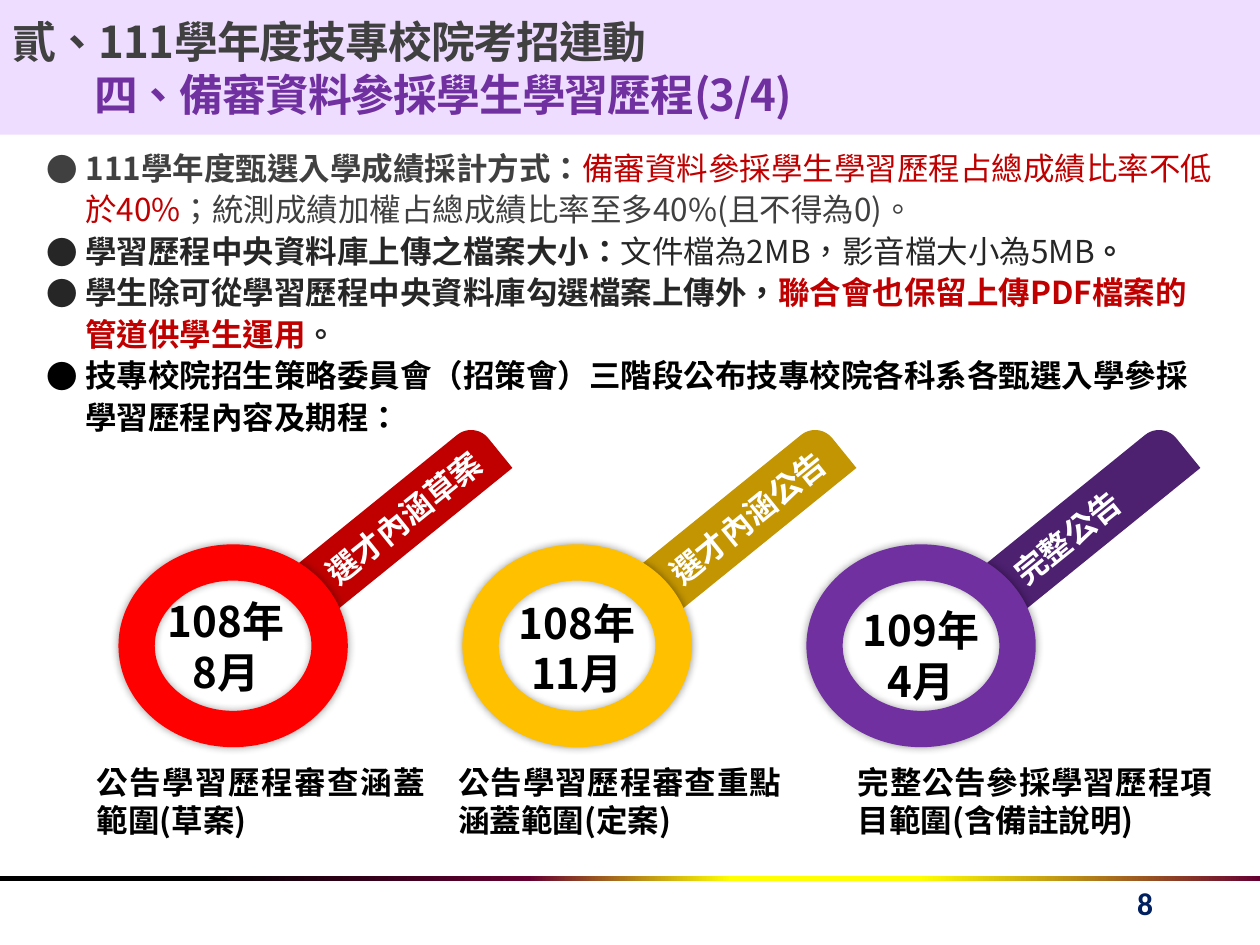
from lxml import etree
from pptx import Presentation
from pptx.dml.color import RGBColor
from pptx.enum.shapes import MSO_SHAPE
from pptx.enum.text import MSO_ANCHOR, PP_ALIGN
from pptx.oxml.ns import qn
from pptx.util import Inches, Pt

RECTANGLE, DONUT = MSO_SHAPE.RECTANGLE, MSO_SHAPE.DONUT
HANDLE = MSO_SHAPE.ROUND_2_SAME_RECTANGLE
MIDDLE = MSO_ANCHOR.MIDDLE
LEFT, CENTER, RIGHT, JUSTIFY = (PP_ALIGN.LEFT, PP_ALIGN.CENTER,
                                PP_ALIGN.RIGHT, PP_ALIGN.JUSTIFY)

BLACK = RGBColor(0x00, 0x00, 0x00)
WHITE = RGBColor(0xFF, 0xFF, 0xFF)
GRAY = RGBColor(0x40, 0x40, 0x40)
DARK_GRAY = RGBColor(0x26, 0x26, 0x26)
NAVY = RGBColor(0x00, 0x20, 0x60)
LILAC = RGBColor(0xEE, 0xDD, 0xFF)
PURPLE = RGBColor(0x70, 0x30, 0xA0)
DEEP_PURPLE = RGBColor(0x4D, 0x20, 0x70)
CRIMSON = RGBColor(0xC0, 0x00, 0x00)
RED = RGBColor(0xFF, 0x00, 0x00)
GOLD = RGBColor(0xFF, 0xC0, 0x00)
DARK_GOLD = RGBColor(0xC3, 0x95, 0x02)
YELLOW = RGBColor(0xFF, 0xFF, 0x00)
WINE = RGBColor(0x66, 0x00, 0x32)

FONT = "Noto Sans CJK SC"
RULE_STOPS = [(0, BLACK), (16, BLACK), (42, WINE), (58, YELLOW), (73, YELLOW), (100, WINE)]

# Each bullet is a list of (text, colour, bold)
BULLETS = [
    [("111學年度甄選入學成績採計方式：", GRAY, True),
     ("備審資料參採學生學習歷程占總成績比率不低於40%", CRIMSON, False),
     ("；統測成績加權占總成績比率至多40%(且不得為0)。", GRAY, False)],
    [("學習歷程中央資料庫上傳之檔案大小：", DARK_GRAY, True),
     ("文件檔為2MB，影音檔大小為5MB", DARK_GRAY, False),
     ("。", DARK_GRAY, True)],
    [("學生除可從學習歷程中央資料庫勾選檔案上傳外，", DARK_GRAY, True),
     ("聯合會也保留上傳PDF檔案的管道供學生運用", CRIMSON, True),
     ("。", DARK_GRAY, True)],
    [("技專校院招生策略委員會（招策會）三階段公布技專校院各科系各甄選入學"
      "參採學習歷程內容及期程：", BLACK, True)],
]

# Label, ring colour, handle colour, date lines, date box, caption, caption left and width
STAGES = [
    ("選才內涵草案", RED, CRIMSON, ("108年", "8月"), (1.13, 4.68, 1.33, 0.91),
     "公告學習歷程審查涵蓋範圍(草案)", 0.67, 2.8),
    ("選才內涵公告", GOLD, DARK_GOLD, ("108年", "11月"), (3.98, 4.69, 1.2, 0.91),
     "公告學習歷程審查重點涵蓋範圍(定案)", 3.54, 2.76),
    ("完整公告", PURPLE, DEEP_PURPLE, ("109年", "4月"), (6.68, 4.75, 1.26, 0.91),
     "完整公告參採學習歷程項目範圍(含備註說明)", 6.71, 3.01),
]
STAGE_LEFT, STAGE_STEP = 0.94, 2.73
HANDLE_ANGLE = 321


def add_run(paragraph, text, size, color, bold=True, name=FONT, spacing=None):
    run = paragraph.add_run()
    run.text = text
    formats = {"size": Pt(size), "bold": bold, "name": name}
    for attribute, value in formats.items():
        setattr(run.font, attribute, value)
    run.font.color.rgb = color
    properties = run._r.get_or_add_rPr()
    properties.set("lang", "zh-TW")
    if spacing is not None:
        properties.set("spc", str(spacing))
    east_asian = etree.Element(qn("a:ea"), typeface=name)
    properties.find(qn("a:latin")).addnext(east_asian)


def add_shape(slide, kind, box, color, adjustments=(), rotation=0):
    shape = slide.shapes.add_shape(kind, *map(Inches, box))
    shape.shadow.inherit = False
    shape.fill.solid()
    shape.fill.fore_color.rgb = color
    shape.line.fill.background()
    for index, value in enumerate(adjustments):
        shape.adjustments[index] = value
    shape.rotation = rotation
    return shape


def add_text(slide, box, lines, size, color, align=LEFT, name=FONT,
             line_spacing=None, rotation=0):
    text_box = slide.shapes.add_textbox(*map(Inches, box))
    text_box.rotation = rotation
    frame = text_box.text_frame
    frame.word_wrap = True
    for index, line in enumerate(lines):
        paragraph = frame.paragraphs[0] if index == 0 else frame.add_paragraph()
        paragraph.alignment = align
        paragraph.line_spacing = line_spacing
        add_run(paragraph, line, size, color, name=name)


def add_glow_shadow(shape):
    effects = shape._element.spPr.find(qn("a:effectLst"))
    shadow = etree.SubElement(effects, qn("a:outerShdw"), blurRad=str(Pt(5)),
                              dist="0", dir="0", algn="ctr", rotWithShape="0")
    color = etree.SubElement(shadow, qn("a:srgbClr"), val=str(BLACK))
    etree.SubElement(color, qn("a:alpha"), val="40000")


def add_footer(slide):
    rule = add_shape(slide, RECTANGLE, (0, 6.95, 10, 0.04), BLACK)
    rule.fill.gradient()
    rule.fill.gradient_angle = 0
    stops = rule._element.spPr.find(qn("a:gradFill")).find(qn("a:gsLst"))
    for stop in list(stops):
        stops.remove(stop)
    for position, color in RULE_STOPS:
        stop = etree.SubElement(stops, qn("a:gs"), pos=str(position * 1000))
        etree.SubElement(stop, qn("a:srgbClr"), val=str(color))
    add_text(slide, (8.64, 6.97, 0.61, 0.4), ["8"], 18, NAVY, RIGHT, "Calibri")


def add_title(slide):
    banner = add_shape(slide, RECTANGLE, (0, 0, 10, 1.07), LILAC)
    frame = banner.text_frame
    frame.word_wrap = True
    frame.vertical_anchor = MIDDLE
    heading, subheading = frame.paragraphs[0], frame.add_paragraph()
    heading.alignment = LEFT
    subheading.alignment = JUSTIFY
    subheading._p.get_or_add_pPr().set("marL", str(Inches(0.65)))
    add_run(heading, "貳、111學年度技專校院考招連動", 25, GRAY, spacing=-50)
    add_run(subheading, "四、備審資料參採學生學習歷程(3/4)", 25, PURPLE, spacing=-50)


def add_bullets(slide):
    text_box = slide.shapes.add_textbox(*map(Inches, (0.27, 1.1, 9.45, 2.77)))
    frame = text_box.text_frame
    frame.word_wrap = True
    for index, runs in enumerate(BULLETS):
        paragraph = frame.paragraphs[0] if index == 0 else frame.add_paragraph()
        paragraph.line_spacing = 1.1
        properties = paragraph._p.get_or_add_pPr()
        properties.set("marL", str(Inches(0.31)))
        properties.set("indent", str(Inches(-0.31)))
        etree.SubElement(properties, qn("a:buFont"), typeface=FONT)
        etree.SubElement(properties, qn("a:buChar"), char="●")
        for text, color, bold in runs:
            add_run(paragraph, text, 18, color, bold)


def add_stage(slide, left, label, ring_color, handle_color, date, date_box,
              caption, caption_left, caption_width):
    # Tilted handle with its label, then the ring over its lower end
    add_shape(slide, HANDLE, (left + 1.19, 3.92, 2.01, 0.48), handle_color,
              (0.367, 0), HANDLE_ANGLE)
    add_text(slide, (left + 1.41, 3.89, 1.76, 0.4), [label], 18, WHITE,
             rotation=HANDLE_ANGLE)
    ring = add_shape(slide, DONUT, (left, 4.32, 1.82, 1.61), ring_color, (0.179,))
    add_glow_shadow(ring)
    # Date in the ring and caption below
    add_text(slide, date_box, date, 24, BLACK, CENTER)
    add_text(slide, (caption_left, 6, caption_width, 0.72), [caption], 18, BLACK,
             JUSTIFY, line_spacing=Pt(22))


def main():
    presentation = Presentation()
    presentation.slide_width = Inches(10)
    presentation.slide_height = Inches(7.5)
    slide = presentation.slides.add_slide(presentation.slide_layouts[6])
    add_footer(slide)
    add_title(slide)
    add_bullets(slide)
    for index, stage in enumerate(STAGES):
        add_stage(slide, STAGE_LEFT + index * STAGE_STEP, *stage)
    presentation.save("out.pptx")


if __name__ == "__main__":
    main()
